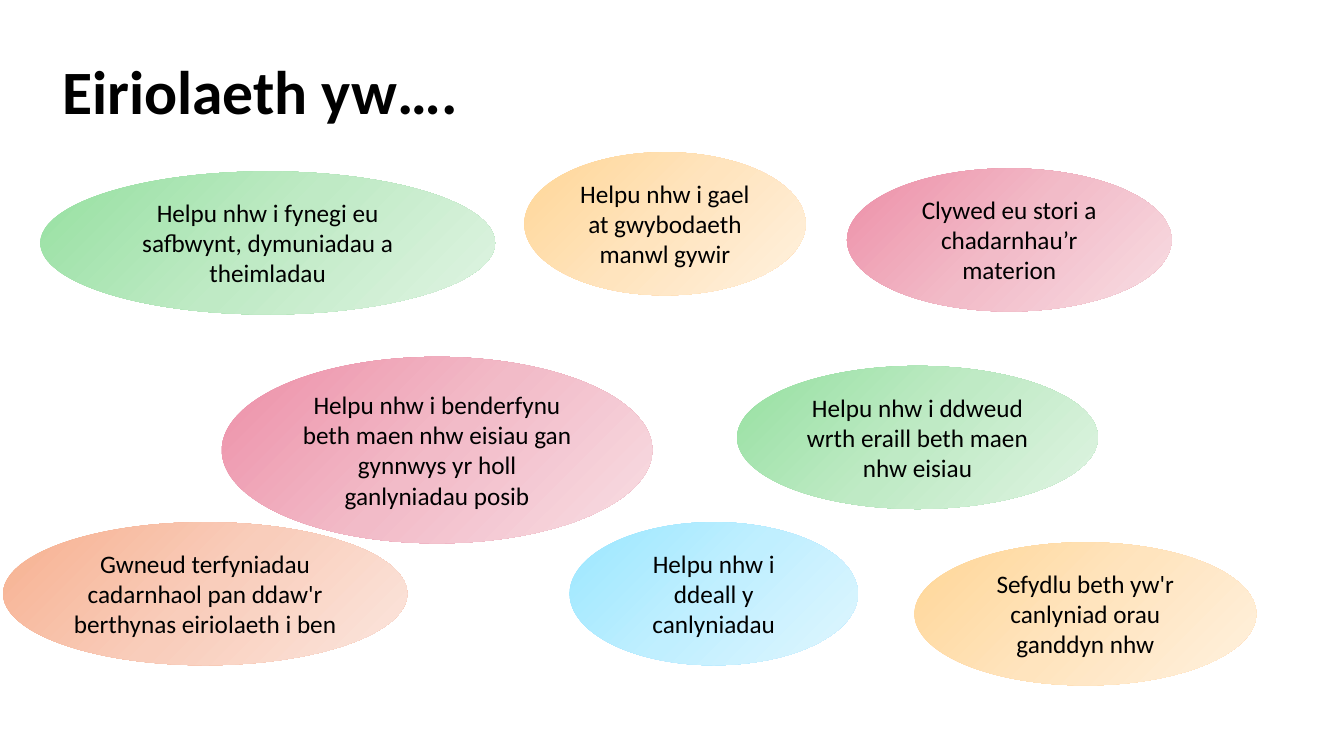
from copy import deepcopy

from pptx import Presentation
from pptx.dml.color import RGBColor
from pptx.enum.shapes import MSO_SHAPE as Shape
from pptx.enum.text import MSO_ANCHOR as Anchor, MSO_AUTO_SIZE as AutoSize, PP_ALIGN as Align
from pptx.oxml.ns import qn
from pptx.util import Inches, Pt

BLACK = RGBColor(0x00, 0x00, 0x00)
GREEN = (RGBColor(0x95, 0xE0, 0xA0), RGBColor(0xBF, 0xEA, 0xC5), RGBColor(0xE0, 0xF4, 0xE3))
AMBER = (RGBColor(0xFF, 0xD6, 0x96), RGBColor(0xFF, 0xE4, 0xBE), RGBColor(0xFF, 0xF1, 0xDF))
PINK = (RGBColor(0xED, 0x8E, 0xA7), RGBColor(0xF2, 0xBB, 0xC8), RGBColor(0xF8, 0xDE, 0xE4))
CORAL = (RGBColor(0xF7, 0xB0, 0x8F), RGBColor(0xF9, 0xCD, 0xBB), RGBColor(0xFB, 0xE6, 0xDE))
BLUE = (RGBColor(0x9A, 0xE7, 0xFF), RGBColor(0xC0, 0xEF, 0xFF), RGBColor(0xE0, 0xF6, 0xFE))

BUBBLE_HEIGHT = 1.42
TALL_BUBBLE_HEIGHT = 1.85

BUBBLES = [
    (5.2, 1.51, 2.79, BUBBLE_HEIGHT, AMBER, "Helpu nhw i gael at gwybodaeth manwl gywir"),
    (0.4, 1.7, 4.51, BUBBLE_HEIGHT, GREEN, "Helpu nhw i fynegi eu safbwynt, dymuniadau a theimladau"),
    (8.4, 1.67, 3.22, BUBBLE_HEIGHT, PINK, "Clywed eu stori a chadarnhau’r materion"),
    (2.2, 3.54, 4.27, TALL_BUBBLE_HEIGHT, PINK,
     "Helpu nhw i benderfynu beth maen nhw eisiau gan gynnwys yr holl ganlyniadau posib"),
    (0.03, 5.18, 4.01, BUBBLE_HEIGHT, CORAL,
     "Gwneud terfyniadau cadarnhaol pan ddaw'r berthynas eiriolaeth i ben"),
    (5.65, 5.18, 2.86, BUBBLE_HEIGHT, BLUE, "Helpu nhw i ddeall y canlyniadau"),
    (9.07, 5.38, 3.39, BUBBLE_HEIGHT, AMBER, "Sefydlu beth yw'r canlyniad orau ganddyn nhw"),
    (7.31, 3.63, 3.58, BUBBLE_HEIGHT, GREEN, "Helpu nhw i ddweud wrth eraill beth maen nhw eisiau"),
]


class AdvocacySlide:
    font_name = "Calibri"
    title_size = Pt(44)
    bubble_size = Pt(18)

    def __init__(self, slide):
        self.slide = slide

    def set_words(self, frame, words, size, bold=False):
        frame.text = words
        frame.word_wrap = True
        paragraph = frame.paragraphs[0]
        font = paragraph.runs[0].font
        font.name, font.size, font.bold = self.font_name, size, bold
        font.color.rgb = BLACK
        return paragraph

    def add_title(self, left, top, width, height, words):
        heading = self.slide.shapes.add_textbox(
            Inches(left), Inches(top), Inches(width), Inches(height))
        heading.text_frame.vertical_anchor = Anchor.MIDDLE
        paragraph = self.set_words(heading.text_frame, words, self.title_size, bold=True)
        paragraph.line_spacing = 0.9

    def add_bubble(self, left, top, width, height, shades, words):
        bubble = self.slide.shapes.add_shape(
            Shape.OVAL, Inches(left), Inches(top), Inches(width), Inches(height))
        bubble.shadow.inherit = False
        bubble.line.fill.background()
        self.shade_bubble(bubble, shades)
        frame = bubble.text_frame
        frame.vertical_anchor = Anchor.TOP
        self.set_words(frame, words, self.bubble_size).alignment = Align.CENTER
        frame.auto_size = AutoSize.SHAPE_TO_FIT_TEXT

    def shade_bubble(self, bubble, shades):
        bubble.fill.gradient()
        bubble.fill.gradient_angle = 315
        stop_list = bubble.element.spPr.find(qn("a:gradFill")).find(qn("a:gsLst"))
        stop_list.insert(1, deepcopy(stop_list[0]))
        for index, (stop, shade) in enumerate(zip(bubble.fill.gradient_stops, shades)):
            stop.position = index / 2
            stop.color.rgb = shade


def main():
    deck = Presentation()
    deck.slide_width, deck.slide_height = Inches(13.33), Inches(7.5)
    advocacy = AdvocacySlide(deck.slides.add_slide(deck.slide_layouts[6]))
    advocacy.add_title(0.52, 0.47, 11.2, 0.93, "Eiriolaeth yw….")
    for bubble in BUBBLES:
        advocacy.add_bubble(*bubble)
    deck.save("out.pptx")


if __name__ == "__main__":
    main()
